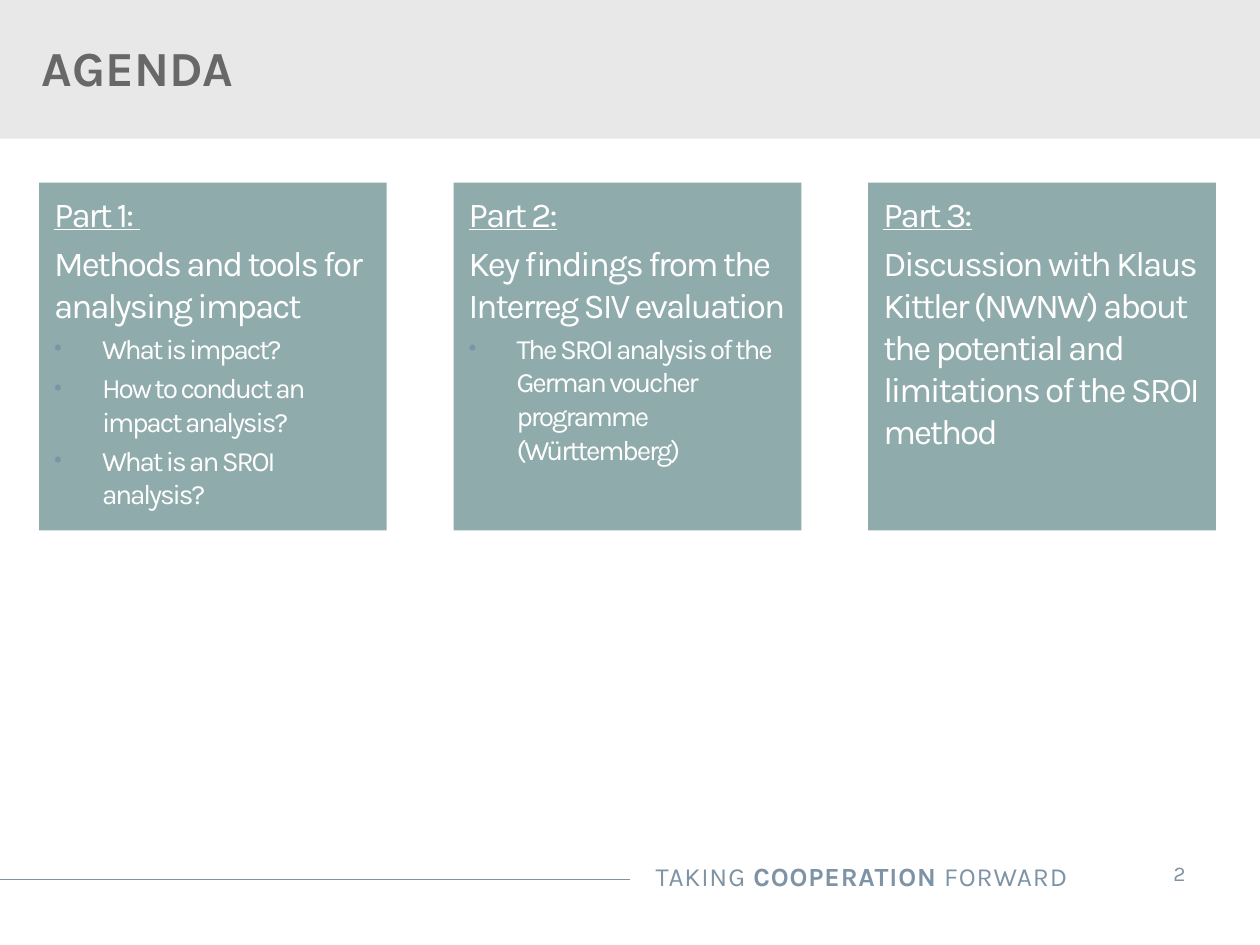
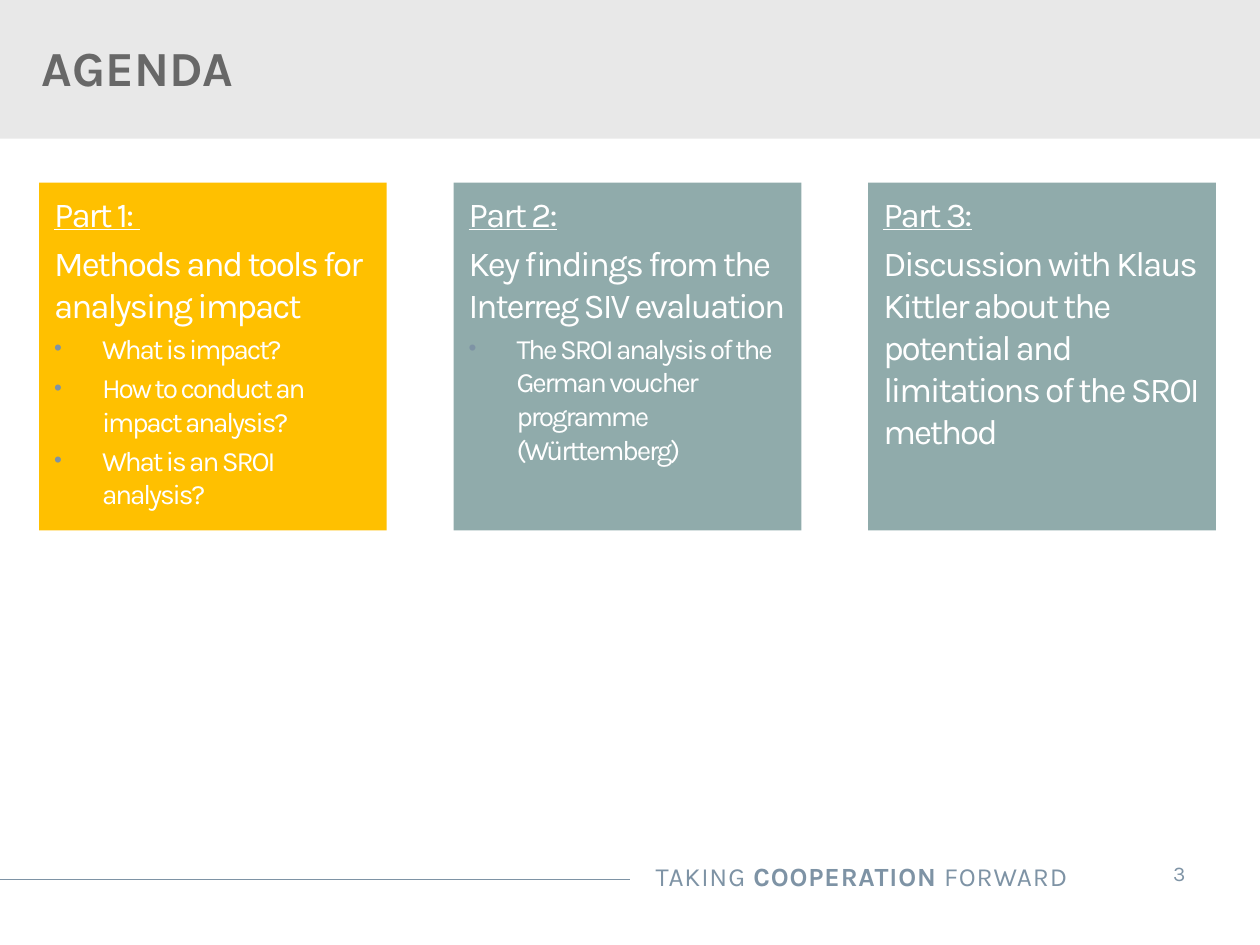
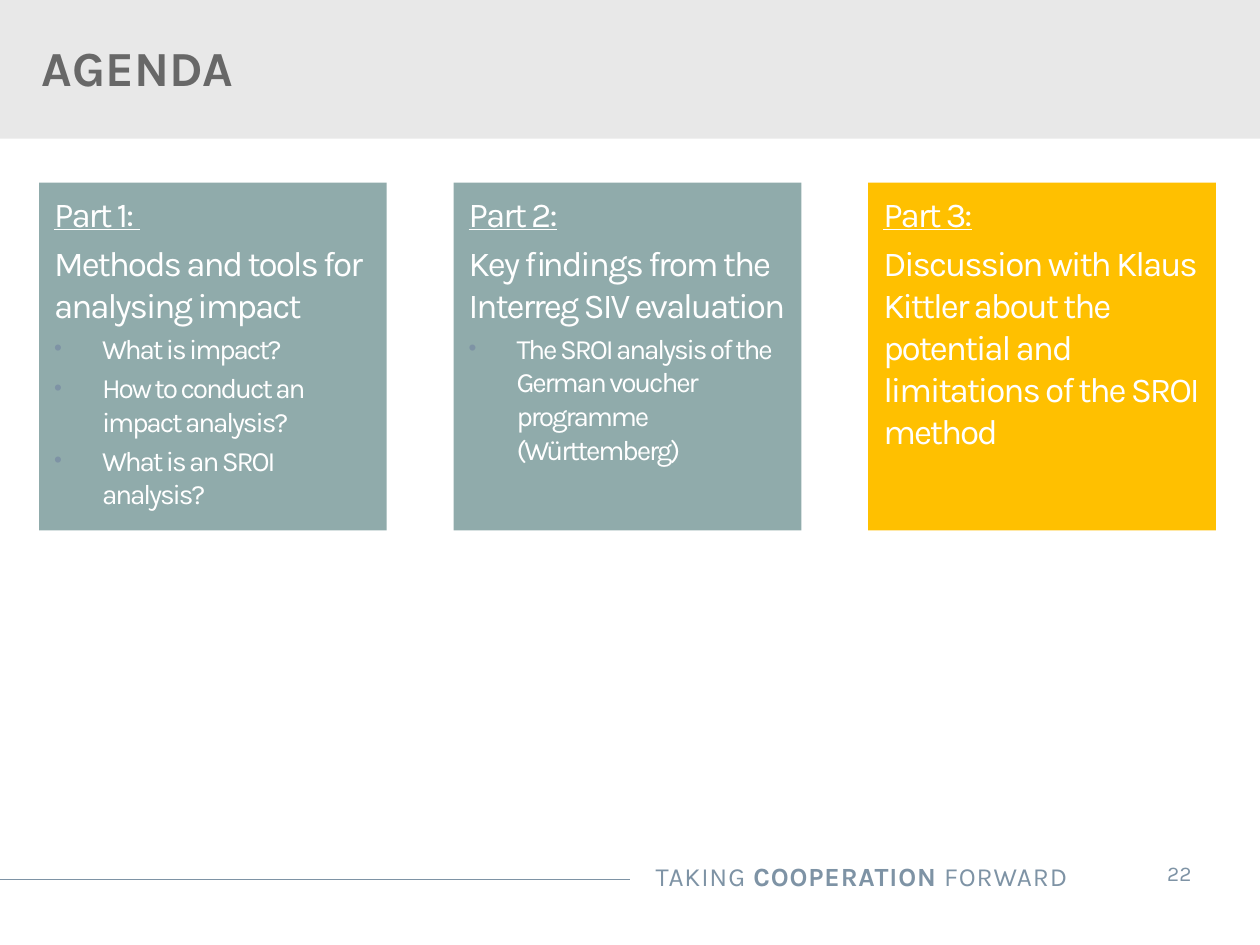
import pptx
import pptx.util
import pptx.dml.color
import pptx.enum.shapes
import pptx.enum.text
import lxml.etree
import pptx.oxml.ns

Inches, Pt = pptx.util.Inches, pptx.util.Pt
ALIGN = pptx.enum.text.PP_ALIGN
ANCHOR = pptx.enum.text.MSO_ANCHOR
FIT = pptx.enum.text.MSO_AUTO_SIZE

FONT = "Karla"
WHITE, GREY, BAND, SLATE = "FFFFFF", "686868", "E8E8E8", "7E93A5"
TEAL, AMBER = "90ABAB", "FFC000"

TITLE = "AGENDA"
SLOGAN = [("TAKING ", False), ("COOPERATION", True), (" FORWARD", False)]
PARTS = [
    ("Part 1: ", "Methods and tools for analysing impact",
     ["What is impact?", "How to conduct an impact analysis?", "What is an SROI analysis?"]),
    ("Part 2:", "Key findings from the Interreg SIV evaluation",
     ["The SROI analysis of the German voucher programme (Württemberg)"]),
    ("Part 3:", "Discussion with Klaus Kittler{} about the potential and limitations of the SROI method", []),
]
PAGES = [
    {"number": "2", "active": None, "affiliation": " (NWNW)"},
    {"number": "3", "active": 0, "affiliation": ""},
    {"number": "22", "active": 2, "affiliation": ""},
]

CARD_LEFT, CARD_TOP, CARD_SIZE, CARD_PITCH = 0.31, 1.45, 2.76, 3.29
COMPARISON_LAYOUT = 4


def color(value):
    return pptx.dml.color.RGBColor.from_string(value)


def apply(target, values):
    for name, value in values.items():
        setattr(target, name, value)


def place(shape, left, top, width, height):
    apply(shape, {"left": Inches(left), "top": Inches(top),
                  "width": Inches(width), "height": Inches(height)})


def add_child(parent, tag, **attributes):
    child = lxml.etree.SubElement(parent, pptx.oxml.ns.qn(tag), attributes)
    return child


def add_span(para, text, size, ink, spacing=0, bold=False, underline=False):
    span = para.add_run()
    span.text = text
    apply(span.font, {"name": FONT, "size": Pt(size), "bold": bold, "underline": underline})
    span.font.color.rgb = color(ink)
    if spacing:
        span.font._element.set("spc", str(round(spacing * 100)))


def set_indent(para, margin, first=0):
    properties = para._p.get_or_add_pPr()
    properties.set("marL", str(Inches(margin)))
    properties.set("indent", str(Inches(first)))
    return properties


def set_bullet(para, bulleted):
    if not bulleted:
        add_child(set_indent(para, 0), "a:buNone")
        return
    properties = set_indent(para, 0.38, -0.38)
    add_child(add_child(properties, "a:buClr"), "a:srgbClr", val=SLATE)
    add_child(properties, "a:buSzPct", val="80000")
    add_child(properties, "a:buFont", typeface="Arial")
    add_child(properties, "a:buChar", char="•")


def add_frame(page, number):
    band = page.shapes.add_shape(pptx.enum.shapes.MSO_SHAPE.RECTANGLE, 0, 0, Inches(10), Inches(1.1))
    band.shadow.inherit = False
    band.fill.solid()
    band.fill.fore_color.rgb = color(BAND)
    band.line.fill.background()
    rule = page.shapes.add_connector(pptx.enum.shapes.MSO_CONNECTOR.STRAIGHT,
                                     Inches(-0.01), Inches(6.98), Inches(5), Inches(6.98))
    rule.line.color.rgb = color(SLATE)
    rule.line.width = Pt(0.75)
    add_child(rule._element.spPr, "a:effectLst")
    for shape in (band, rule):
        page.shapes.element.insert(2, shape.element)

    slogan = page.shapes.add_textbox(Inches(3.88), Inches(6.78), Inches(4.69), Inches(0.35)).text_frame
    apply(slogan, {"word_wrap": True, "auto_size": FIT.SHAPE_TO_FIT_TEXT})
    para = slogan.paragraphs[0]
    para.alignment = ALIGN.RIGHT
    for text, bold in SLOGAN:
        add_span(para, text, 15, SLATE, 0.5, bold)

    counter = page.shapes.add_textbox(Inches(8.99), Inches(6.73), Inches(0.74), Inches(0.4)).text_frame
    apply(counter, {"word_wrap": False, "auto_size": FIT.SHAPE_TO_FIT_TEXT,
                    "margin_left": Inches(0.2), "margin_right": Inches(0.2),
                    "margin_top": Inches(0.1), "margin_bottom": Inches(0.1)})
    para = counter.paragraphs[0]
    para.alignment = ALIGN.CENTER
    add_span(para, number, 12, SLATE)


def fill_title(title):
    place(title, -0.01, 0.16, 7.18, 0.75)
    apply(title.text_frame, {"vertical_anchor": ANCHOR.MIDDLE, "auto_size": FIT.NONE})
    para = title.text_frame.paragraphs[0]
    para.alignment = ALIGN.LEFT
    set_indent(para, 0.24)
    add_span(para, TITLE, 28, GREY, bold=True)


def fill_card(card, index, part, fill, affiliation):
    place(card, CARD_LEFT + index * CARD_PITCH, CARD_TOP, CARD_SIZE, CARD_SIZE)
    card.fill.solid()
    card.fill.fore_color.rgb = color(fill)
    frame = card.text_frame
    apply(frame, {"word_wrap": True, "auto_size": FIT.NONE, "vertical_anchor": ANCHOR.TOP,
                  "margin_left": Inches(0.12), "margin_right": Inches(0.12),
                  "margin_top": Inches(0.08), "margin_bottom": Inches(0.12)})
    heading, topic, questions = part
    rows = [(heading, 20, True, False), (topic.format(affiliation), 20, False, False)]
    rows += [(question, 16, False, True) for question in questions]
    for position, (text, size, underline, bulleted) in enumerate(rows):
        para = frame.add_paragraph() if position else frame.paragraphs[0]
        set_bullet(para, bulleted)
        apply(para, {"alignment": ALIGN.LEFT, "space_before": Pt(size * 0.2 if position else 0)})
        add_span(para, text, size, WHITE, -1.2, underline=underline)


def main():
    deck = pptx.Presentation()
    apply(deck, {"slide_width": Inches(10), "slide_height": Inches(7.5)})
    for content in PAGES:
        page = deck.slides.add_slide(deck.slide_layouts[COMPARISON_LAYOUT])
        title, *cards = list(page.placeholders)
        fill_title(title)
        for index, (card, part) in enumerate(zip(cards, PARTS)):
            fill = AMBER if index == content["active"] else TEAL
            fill_card(card, index, part, fill, content["affiliation"])
        for spare in cards[len(PARTS):]:
            page.shapes.element.remove(spare.element)
        add_frame(page, content["number"])
    deck.save("out.pptx")


if __name__ == "__main__":
    main()
